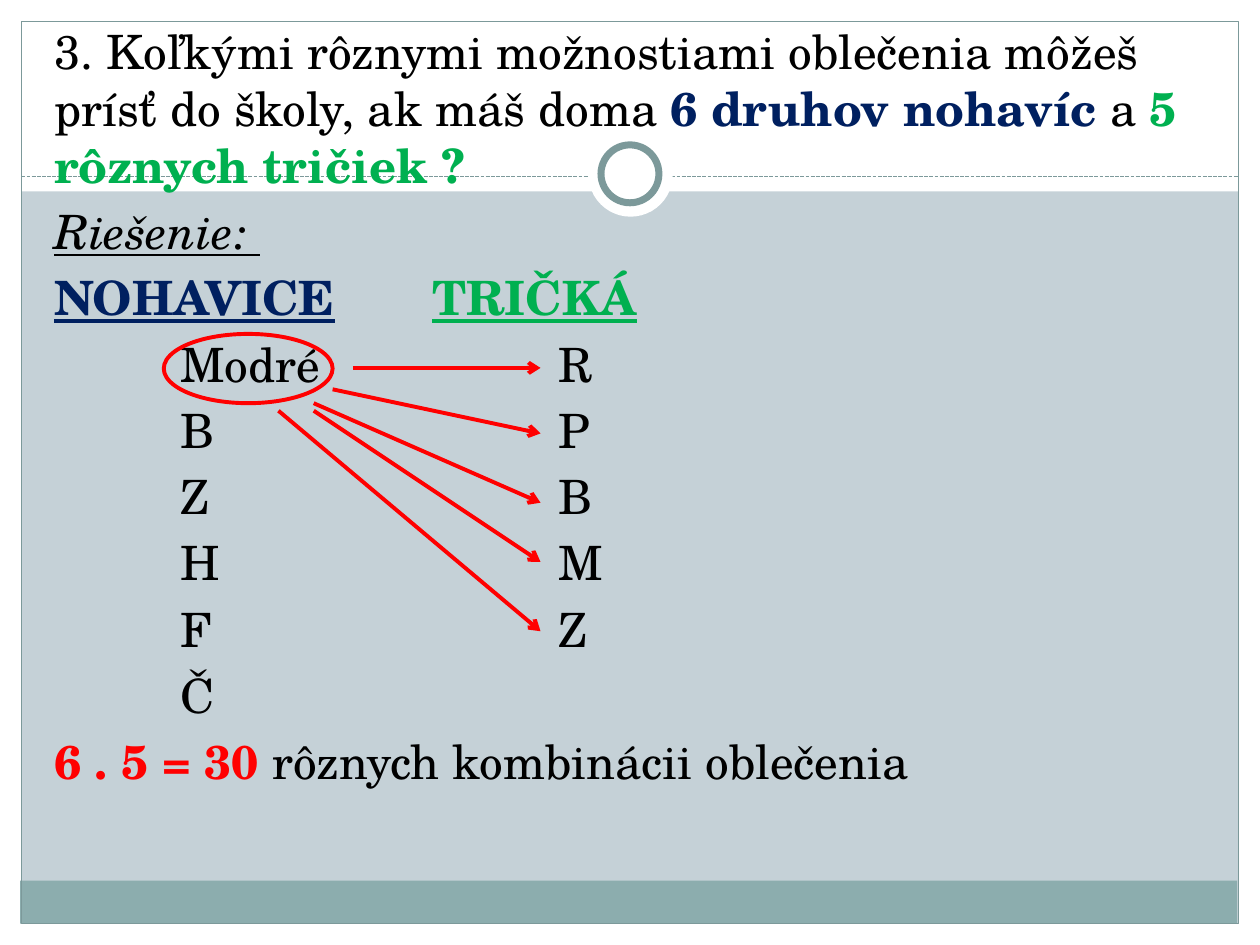
"""Build a slide that counts outfits from six trousers and five T-shirts."""
from lxml import etree
from pptx import Presentation
from pptx import util as u
from pptx.dml.color import RGBColor
from pptx.enum import dml, shapes, text
from pptx.oxml.ns import qn

COLORS = {
    "background": "C5D1D7", "white": "FFFFFF", "footer": "8CADAE",
    "frame": "7C999A", "black": "000000", "navy": "002060",
    "green": "00B050", "red": "FF0000",
}
FONT = "TeX Gyre Schola"
TAB_WIDTH = str(u.Inches(1))
RECTANGLE = shapes.MSO_SHAPE.RECTANGLE
OVAL = shapes.MSO_SHAPE.OVAL
TROUSERS = ["Modré", "B", "Z", "H", "F", "Č"]
SHIRTS = ["R", "P", "B", "M", "Z"]


def rgb(name):
    """Return the palette colour called name."""
    return RGBColor.from_string(COLORS[name])


def add_outline(slide, kind, box, fill=None, line=None, width=0.75):
    """Add a preset shape with an optional fill and line."""
    shape = slide.shapes.add_shape(kind, *map(u.Inches, box))
    shape.shadow.inherit = False
    if fill:
        shape.fill.solid()
        shape.fill.fore_color.rgb = rgb(fill)
    else:
        shape.fill.background()
    if line:
        shape.line.color.rgb = rgb(line)
        shape.line.width = u.Pt(width)
    else:
        shape.line.fill.background()


def add_line(slide, start, end, color, width):
    """Add a straight line without a shadow and return it."""
    line = slide.shapes.add_connector(
        shapes.MSO_CONNECTOR.STRAIGHT, *map(u.Inches, (*start, *end)))
    line.line.color.rgb = rgb(color)
    line.line.width = u.Pt(width)
    etree.SubElement(line._element.spPr, qn("a:effectLst"))
    return line


def add_arrow(slide, start, end):
    """Add a red arrow from the chosen trousers to a T-shirt."""
    arrow = add_line(slide, start, end, "red", 2.25)
    etree.SubElement(arrow.line._get_or_add_ln(), qn("a:tailEnd"), type="arrow")


def add_backdrop(slide):
    """Draw the white margins, the frame, the divider and its ring."""
    slide.background.fill.solid()
    slide.background.fill.fore_color.rgb = rgb("background")
    margins = [(0, 7.33, 10, 0.17), (0, 0, 10, 1.52),
               (0, 0, 0.17, 7.5), (9.83, 0, 0.17, 7.5)]
    for margin in margins:
        add_outline(slide, RECTANGLE, margin, "white")
    add_outline(slide, RECTANGLE, (0.16, 6.99, 9.66, 0.34), "footer")
    add_outline(slide, RECTANGLE, (0.17, 0.17, 9.66, 7.16), line="frame")
    divider = add_line(slide, (0.17, 1.4), (9.83, 1.4), "frame", 0.75)
    divider.line.dash_style = dml.MSO_LINE.SQUARE_DOT
    add_outline(slide, OVAL, (4.67, 1.05, 0.67, 0.67), "white")
    add_outline(slide, OVAL, (4.77, 1.15, 0.46, 0.46), "white", "frame", 4)


def widen_master_tabs(deck):
    """Make the default tab of first-level text one inch wide."""
    for level in deck.slide_master._element.iter(qn("a:lvl1pPr")):
        level.set("defTabSz", TAB_WIDTH)


def format_paragraph(paragraph):
    """Set the font, drop the bullet and use one-inch tabs."""
    paragraph.font.name = FONT
    paragraph.font.size = u.Pt(27)
    properties = paragraph._p.get_or_add_pPr()
    for key, value in (("marL", "0"), ("indent", "0"), ("defTabSz", TAB_WIDTH)):
        properties.set(key, value)
    bullet = etree.Element(qn("a:buNone"))
    properties.find(qn("a:defRPr")).addprevious(bullet)


def add_run(paragraph, words, color="black", style=""):
    """Add a run; style holds b, i and u for bold, italic and underline."""
    run = paragraph.add_run()
    run.text = words
    run.font.color.rgb = rgb(color)
    run.font.bold = "b" in style
    run.font.italic = "i" in style
    run.font.underline = "u" in style


def solution_lines():
    """Return the paragraphs of the task and its solution as lists of runs."""
    shirts = SHIRTS + [""] * (len(TROUSERS) - len(SHIRTS))
    pairs = []
    for trousers, shirt in zip(TROUSERS, shirts):
        gap = "\t\t" if len(trousers) > 1 else "\t\t\t"
        pairs.append([(f"\t{trousers}{gap}{shirt}".rstrip(),)])
    return [
        [("3. Koľkými rôznymi možnostiami oblečenia môžeš prísť do školy, "
          "ak máš doma ",),
         ("6 druhov nohavíc ", "navy", "b"), ("a ",),
         ("5 rôznych tričiek ?", "green", "b")],
        [("Riešenie: ", "black", "iu")],
        [("NOHAVICE", "navy", "bu"), ("\t", "navy", "b"),
         ("TRIČKÁ", "green", "bu")],
        *pairs,
        [("6 . 5 = 30 ", "red", "b"), ("rôznych kombinácii oblečenia",)],
    ]


def fill_body(slide, body):
    """Place the body above the backdrop and write the solution in it."""
    slide.shapes._spTree.append(body._element)
    body.left, body.top, body.width, body.height = map(
        u.Inches, (0.33, 0.13, 9.3, 7.56))
    frame = body.text_frame
    frame.word_wrap = True
    frame.auto_size = text.MSO_AUTO_SIZE.NONE
    for index, runs in enumerate(solution_lines()):
        paragraph = frame.add_paragraph() if index else frame.paragraphs[0]
        format_paragraph(paragraph)
        for run in runs:
            add_run(paragraph, *run)


def main():
    """Build and save the slide."""
    deck = Presentation()
    deck.slide_width, deck.slide_height = u.Inches(10), u.Inches(7.5)
    widen_master_tabs(deck)
    slide = deck.slides.add_slide(deck.slide_layouts[1])
    title = slide.shapes.title._element
    title.getparent().remove(title)
    body = slide.placeholders[1]
    add_backdrop(slide)
    fill_body(slide, body)
    add_outline(slide, OVAL, (1.3, 2.65, 1.34, 0.55), line="red", width=2.25)
    starts = [(2.8, 2.92), (2.64, 3.09), (2.49, 3.2), (2.49, 3.26), (2.21, 3.26)]
    shirt_heights = [2.92, 3.44, 3.99, 4.46, 5.01]
    for start, height in zip(starts, shirt_heights):
        add_arrow(slide, start, (4.29, height))
    deck.save("out.pptx")


if __name__ == "__main__":
    main()
